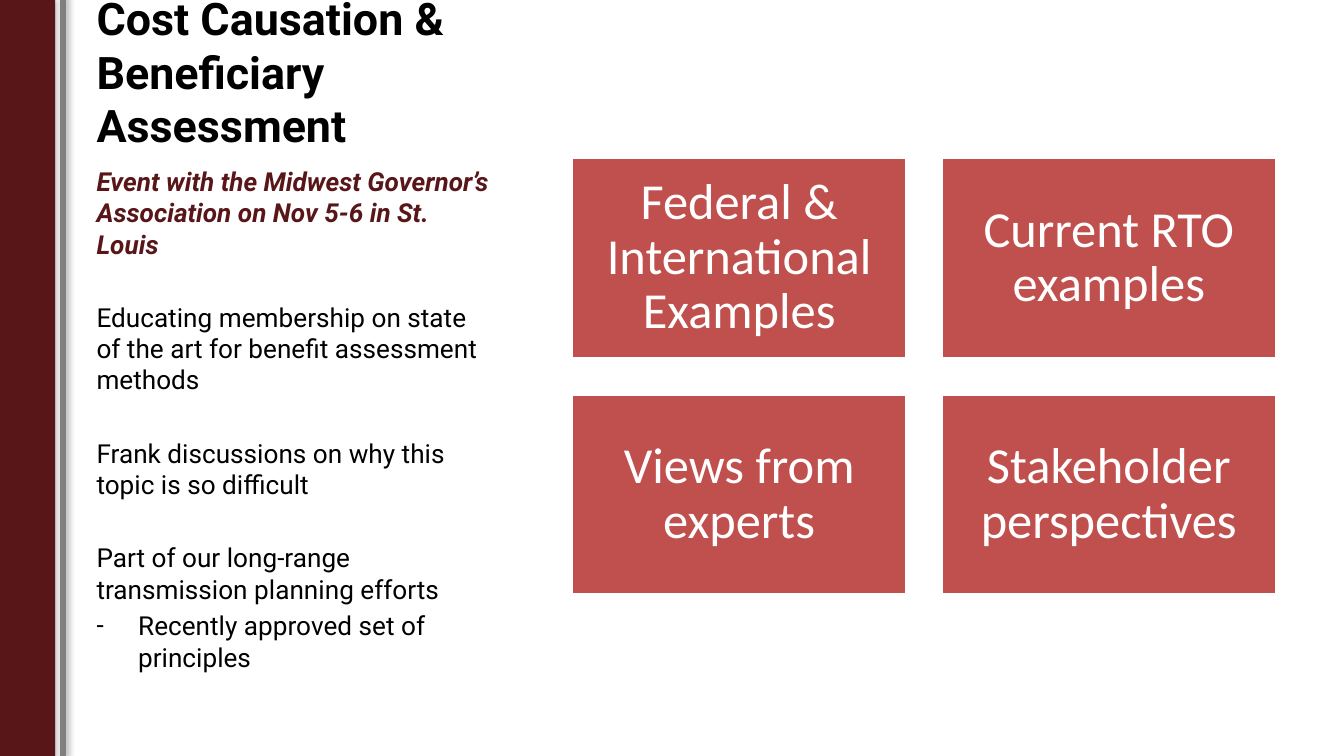
from lxml import etree
from pptx import Presentation
from pptx.dml.color import RGBColor
from pptx.enum.shapes import MSO_CONNECTOR, MSO_SHAPE
from pptx.enum.text import MSO_ANCHOR, PP_ALIGN
from pptx.oxml.ns import qn
from pptx.util import Inches, Pt

MAROON = RGBColor(0x58, 0x16, 0x19)
GRAY = RGBColor(0x80, 0x80, 0x80)
RED = RGBColor(0xC0, 0x50, 0x4D)
BLACK = RGBColor(0, 0, 0)
WHITE = RGBColor(0xFF, 0xFF, 0xFF)


def add_shadow(shape, blur, distance, angle, opacity):
    """Give a shape a black outer shadow; lengths in points, angle in degrees."""
    effects = etree.SubElement(shape._element.spPr, qn("a:effectLst"))
    shadow = etree.SubElement(effects, qn("a:outerShdw"), blurRad=str(Pt(blur)),
                              dist=str(Pt(distance)), dir=str(angle * 60000),
                              rotWithShape="0")
    color = etree.SubElement(shadow, qn("a:srgbClr"), val=str(BLACK))
    etree.SubElement(color, qn("a:alpha"), val=str(opacity * 1000))


def style_font(para, name, size, color, bold=False, italic=False):
    for span in para.runs:
        font = span.font
        font.name, font.size, font.bold, font.italic = name, Pt(size), bold, italic
        font.color.rgb = color


deck = Presentation()
deck.slide_width, deck.slide_height = Inches(10), Inches(5.625)
page = deck.slides.add_slide(deck.slide_layouts[6])

# Side bar and its gray rule
bar = page.shapes.add_shape(MSO_SHAPE.RECTANGLE, Inches(-0.03), Inches(-0.03),
                            Inches(0.44), Inches(5.67))
bar.fill.solid()
bar.fill.fore_color.rgb = MAROON
bar.line.fill.background()
add_shadow(bar, 3.1, 1.8, 90, 35)

rule = page.shapes.add_connector(MSO_CONNECTOR.STRAIGHT, Inches(0.47), Inches(-0.03),
                                 Inches(0.47), Inches(5.64))
rule.line.color.rgb = GRAY
rule.line.width = Pt(3)
add_shadow(rule, 3.8, 1, 0, 40)

# Title, growing upward from its bottom edge
title = page.shapes.add_textbox(Inches(0.62), Inches(0.22), Inches(3.63), Inches(0.96))
frame = title.text_frame
frame.word_wrap = True
frame.vertical_anchor = MSO_ANCHOR.BOTTOM
frame.text = "Cost Causation & Beneficiary Assessment"
style_font(frame.paragraphs[0], "Roboto", 24, BLACK, bold=True)

# Two by two grid of topics
topics = ["Federal & International Examples", "Current RTO examples",
          "Views from experts", "Stakeholder perspectives"]
for index, topic in enumerate(topics):
    row, column = divmod(index, 2)
    box = page.shapes.add_shape(MSO_SHAPE.RECTANGLE, Inches(4.25 + 2.75 * column),
                                Inches(1.17 + 1.76 * row), Inches(2.5), Inches(1.5))
    box.shadow.inherit = False
    box.fill.solid()
    box.fill.fore_color.rgb = RED
    box.line.color.rgb = WHITE
    box.line.width = Pt(2)
    frame = box.text_frame
    frame.word_wrap = True
    frame.vertical_anchor = MSO_ANCHOR.MIDDLE
    frame.margin_left = frame.margin_right = Inches(0.11)
    frame.margin_top = frame.margin_bottom = Inches(0.11)
    frame.text = topic
    para = frame.paragraphs[0]
    para.alignment = PP_ALIGN.CENTER
    para.line_spacing = 0.9
    style_font(para, "Calibri", 27, WHITE)

# Event details: a heading, three points and one dash item
body = page.shapes.add_textbox(Inches(0.62), Inches(1.18), Inches(3.17), Inches(3.8))
frame = body.text_frame
frame.word_wrap = True
frame.text = "Event with the Midwest Governor’s Association on Nov 5-6 in St. Louis"
style_font(frame.paragraphs[0], "Roboto", 14, MAROON, bold=True, italic=True)

points = ["Educating membership on state of the art for benefit assessment methods",
          "Frank discussions on why this topic is so difficult",
          "Part of our long-range transmission planning efforts",
          "Recently approved set of principles"]
for point in points:
    para = frame.add_paragraph()
    para.text = point
    para.space_before = Pt(22.4)
    style_font(para, "Roboto", 14, BLACK)

# The last point is a dash item close under its parent
para.space_before = Pt(2.8)
properties = para._p.get_or_add_pPr()
properties.set("marL", str(Inches(0.31)))
properties.set("indent", str(Inches(-0.31)))
etree.SubElement(properties, qn("a:buFont"), typeface="Roboto")
etree.SubElement(properties, qn("a:buChar"), char="-")

deck.save("out.pptx")
